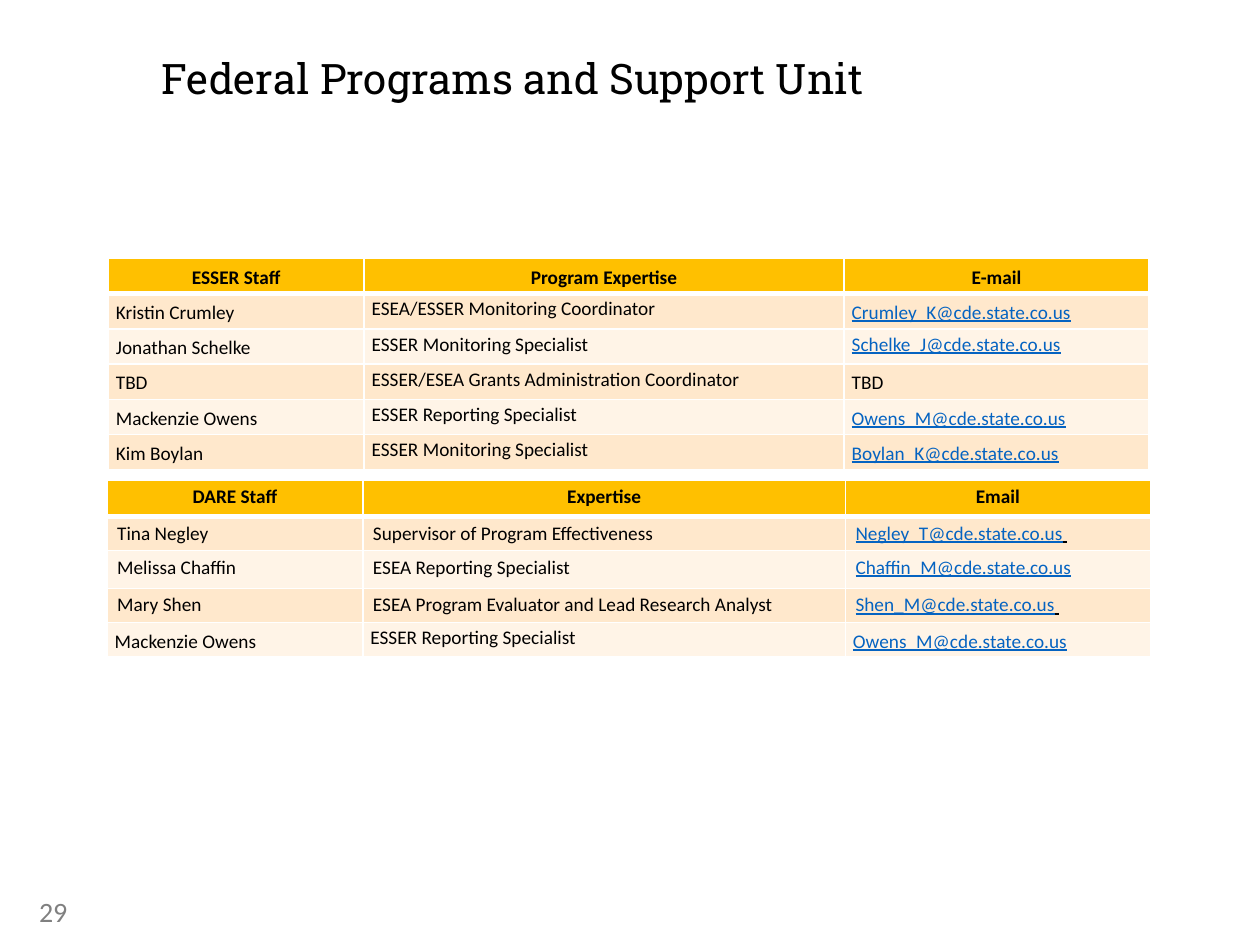
import lxml.etree
import pptx
import pptx.dml.color
import pptx.enum.text
import pptx.oxml.ns
import pptx.util

STAFF_ROWS = [
    ("ESSER Staff", "Program Expertise", "E-mail"),
    ("Kristin Crumley", "ESEA/ESSER Monitoring Coordinator", "Crumley_K@cde.state.co.us"),
    ("Jonathan Schelke", "ESSER Monitoring Specialist", "Schelke_J@cde.state.co.us"),
    ("TBD", "ESSER/ESEA Grants Administration Coordinator", "TBD"),
    ("Mackenzie Owens", "ESSER Reporting Specialist", "Owens_M@cde.state.co.us"),
    ("Kim Boylan", "ESSER Monitoring Specialist", "Boylan_K@cde.state.co.us"),
]
DARE_ROWS = [
    ("DARE Staff", "Expertise", "Email"),
    ("Tina Negley", "Supervisor of Program Effectiveness", "Negley_T@cde.state.co.us "),
    ("Melissa Chaffin", "ESEA Reporting Specialist", "Chaffin_M@cde.state.co.us"),
    ("Mary Shen", "ESEA Program Evaluator and Lead Research Analyst", "Shen_M@cde.state.co.us "),
    ("Mackenzie Owens", "ESSER Reporting Specialist", "Owens_M@cde.state.co.us"),
]


def color(hex_string):
    return pptx.dml.color.RGBColor.from_string(hex_string)


class StaffSlide:
    """Style and current slide, measured on a grid of 100 columns by 75 rows."""

    black, grey, link, white = "000000", "808080", "0563C1", "FFFFFF"
    header, bands = "FFC000", ("FFF4E7", "FFE8CC")
    heading_font, body_font = "Roboto Slab", "Calibri"

    def __init__(self, presentation):
        self.column = presentation.slide_width / 100
        self.row = presentation.slide_height / 75
        self.slide = presentation.slides.add_slide(presentation.slide_layouts[5])

    def box(self, left, top, width, height):
        return (round(left * self.column), round(top * self.row),
                round(width * self.column), round(height * self.row))

    def format_runs(self, paragraph, size, hex_string, font_name, bold=False):
        for run in paragraph.runs:
            run.font.size = pptx.util.Pt(size)
            run.font.name = font_name
            run.font.bold = bold
            run.font.color.rgb = color(hex_string)

    def set_margins(self, target, horizontal, vertical):
        target.margin_left = target.margin_right = round(horizontal * self.column)
        target.margin_top = target.margin_bottom = round(vertical * self.row)

    def add_title(self, text, *grid):
        title = self.slide.shapes.title
        title.left, title.top, title.width, title.height = self.box(*grid)
        frame = title.text_frame
        frame.text = text
        frame.word_wrap = True
        frame.auto_size = pptx.enum.text.MSO_AUTO_SIZE.NONE
        frame.vertical_anchor = pptx.enum.text.MSO_ANCHOR.TOP
        self.set_margins(frame, 0, 0)
        paragraph = frame.paragraphs[0]
        paragraph.alignment = pptx.enum.text.PP_ALIGN.LEFT
        paragraph.line_spacing = 0.9
        self.format_runs(paragraph, 24, self.black, self.heading_font)

    def add_page_number(self, text, *grid):
        frame = self.slide.shapes.add_textbox(*self.box(*grid)).text_frame
        frame.text = text
        frame.word_wrap = True
        frame.vertical_anchor = pptx.enum.text.MSO_ANCHOR.MIDDLE
        self.set_margins(frame, 0.7, 0.4)
        self.format_runs(frame.paragraphs[0], 16, self.grey, self.body_font)

    def add_borders(self, cell, top, bottom):
        properties = cell._tc.get_or_add_tcPr()
        widths = {"a:lnL": 1, "a:lnR": 1, "a:lnT": top, "a:lnB": bottom}
        for position, (tag, width) in enumerate(widths.items()):
            line = lxml.etree.Element(pptx.oxml.ns.qn(tag), w=str(pptx.util.Pt(width)))
            fill = lxml.etree.SubElement(line, pptx.oxml.ns.qn("a:solidFill"))
            lxml.etree.SubElement(fill, pptx.oxml.ns.qn("a:srgbClr"), val=self.white)
            properties.insert(position, line)

    def fill_cell(self, cell, text, row, spacing, margins):
        is_header = row == 0
        cell.fill.solid()
        cell.fill.fore_color.rgb = color(self.header if is_header else self.bands[row % 2])
        self.add_borders(cell, 3 if row == 1 else 1, 3 if is_header else 1)
        self.set_margins(cell, *margins)
        paragraph = cell.text_frame.paragraphs[0]
        paragraph.text = text.rstrip()
        paragraph.line_spacing = spacing
        if is_header:
            paragraph.alignment = pptx.enum.text.PP_ALIGN.CENTER
        is_email = "@" in text
        self.format_runs(paragraph, 11, self.link if is_email else self.black,
                         self.body_font, is_header)
        if is_email:
            paragraph.runs[0].font.underline = True
        if text.endswith(" "):
            space = paragraph.add_run()
            space.text = " "
            space.font.size = pptx.util.Pt(11)
            space.font.name = self.body_font
            space.font.color.rgb = color(self.black)
            space.font.underline = True

    def add_table(self, rows, left, top, widths, heights, loose_rows, tight_cells=()):
        grid = self.box(left, top, sum(widths), sum(heights))
        table = self.slide.shapes.add_table(len(rows), len(widths), *grid).table
        table.horz_banding = False
        for column, width in zip(table.columns, widths):
            column.width = round(width * self.column)
        for row, (texts, height) in enumerate(zip(rows, heights)):
            table.rows[row].height = round(height * self.row)
            loose = row in loose_rows
            margins = (0.6, 0.3) if loose else (0.8, 0.4)
            for column, text in enumerate(texts):
                stretched = (loose and (row == 0 or column != 1)
                             and (row, column) not in tight_cells)
                self.fill_cell(table.cell(row, column), text, row,
                               1.15 if stretched else 1.0, margins)


def main():
    presentation = pptx.Presentation()
    presentation.slide_width = pptx.util.Inches(10)
    presentation.slide_height = pptx.util.Inches(7.5)
    page = StaffSlide(presentation)
    page.add_title("Federal Programs and Support Unit", 12.8, 4.6, 56.4, 6.5)
    page.add_page_number("29", 2.4, 70.3, 22.5, 4)
    page.add_table(STAFF_ROWS, 8.6, 20.5, (20.3, 38.1, 24.2), [2.8] * 6,
                   range(6), [(2, 2)])
    page.add_table(DARE_ROWS, 8.5, 38.1, (20.3, 38.3, 24.2),
                   (2.9, 2.7, 3, 2.7, 2.7), [4])
    presentation.save("out.pptx")


if __name__ == "__main__":
    main()
